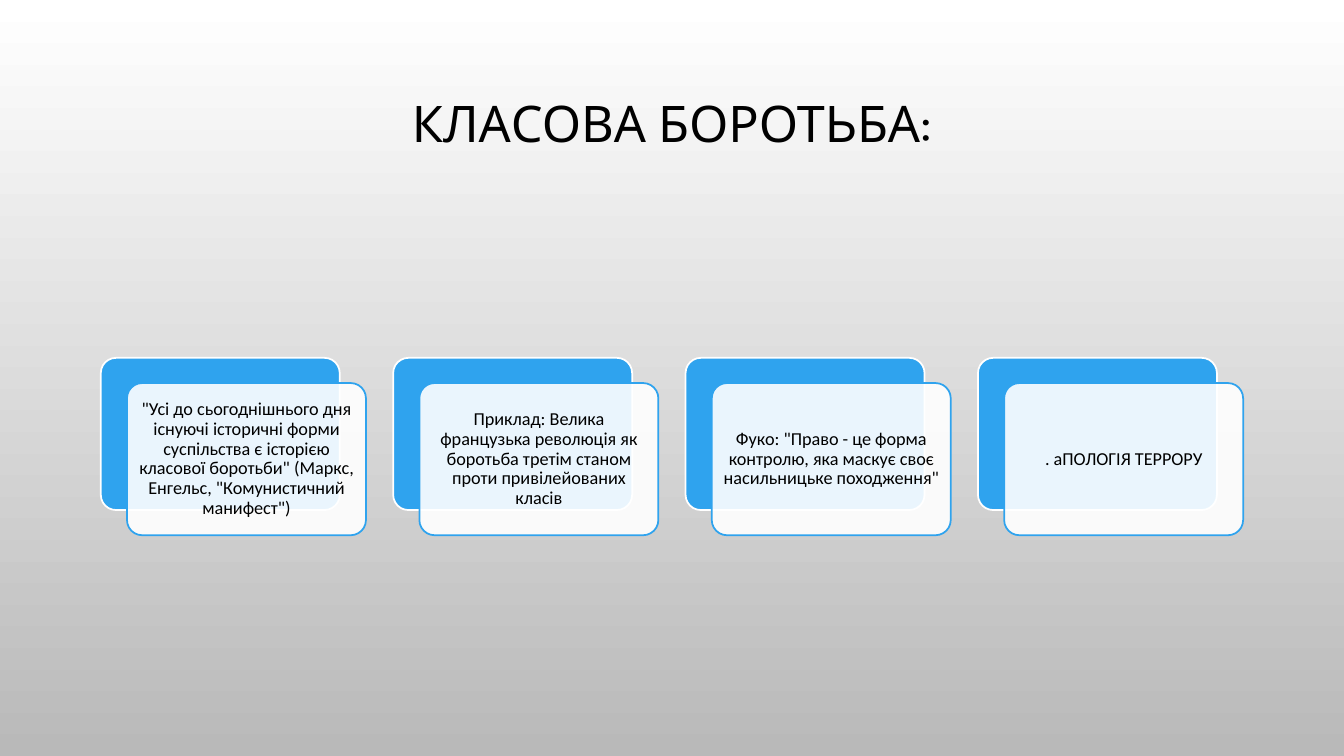
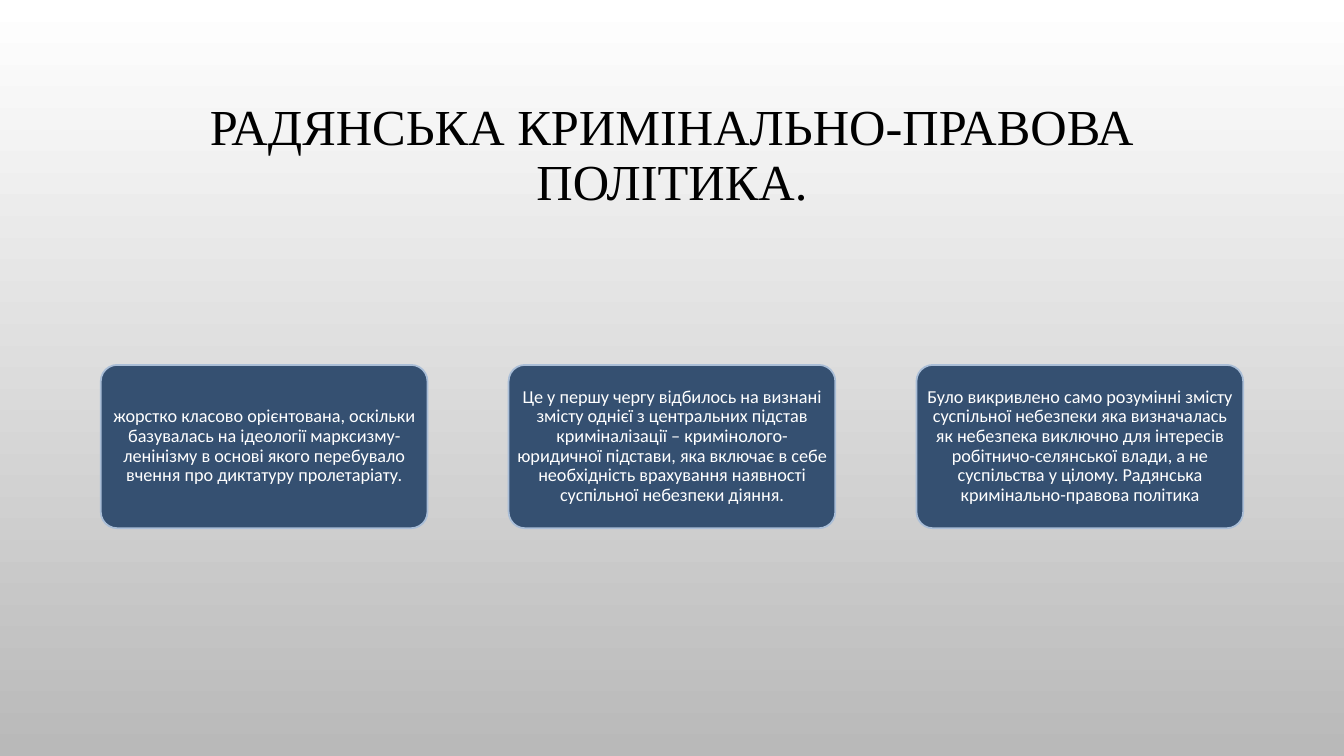
from lxml import etree
from pptx import Presentation
from pptx.dml.color import RGBColor
from pptx.enum.shapes import MSO_SHAPE
from pptx.enum.text import MSO_ANCHOR, MSO_AUTO_SIZE, PP_ALIGN
from pptx.oxml.ns import qn
from pptx.util import Inches, Pt

# Content
CLASS_STRUGGLE = {
    "title": "КЛАСОВА БОРОТЬБА:",
    "title_font": "Karla",
    "space_below": 0.66,
    "cards": [
        "\"Усі до сьогоднішнього дня існуючі історичні форми суспільства є історією "
        "класової боротьби\" (Маркс, Енгельс, \"Комунистичний манифест\")",
        "Приклад: Велика французька революція як боротьба третім станом проти "
        "привілейованих класів",
        "Фуко: \"Право - це форма контролю, яка маскує своє насильницьке походження\"",
        ". аПОЛОГІЯ ТЕРРОРУ",
    ],
}
SOVIET_POLICY = {
    "title": "РАДЯНСЬКА КРИМІНАЛЬНО-ПРАВОВА ПОЛІТИКА.",
    "title_font": "Times New Roman",
    "space_below": 0.05,
    "cards": [
        "жорстко класово орієнтована, оскільки базувалась на ідеології "
        "марксизму-ленінізму в основі якого перебувало вчення про диктатуру пролетаріату.",
        "Це у першу чергу відбилось на визнані змісту однієї з центральних підстав "
        "криміналізації – кримінолого-юридичної підстави, яка включає в себе "
        "необхідність врахування наявності суспільної небезпеки діяння.",
        "Було викривлено само розумінні змісту суспільної небезпеки яка визначалась "
        "як небезпека виключно для інтересів робітничо-селянської влади, а не "
        "суспільства у цілому. Радянська кримінально-правова політика",
    ],
}

# Shared style
COLORS = {
    "white": "FFFFFF", "gray": "B9B9B9", "black": "000000",
    "blue": "2FA3EE", "navy": "355071", "pale": "AABED7",
}
LEFT, SPAN = 1, 11.33


def color(name):
    return RGBColor.from_string(COLORS[name])


def style_template(presentation, layout):
    fill = presentation.slide_master.background.fill
    fill.gradient()
    fill.gradient_angle = 270
    for stop, name in zip(fill.gradient_stops, ("white", "gray")):
        stop.color.rgb = color(name)
    for placeholder in layout.placeholders:
        if placeholder.placeholder_format.idx == 0:
            placeholder.left, placeholder.top = Inches(LEFT), Inches(0.68)
            placeholder.width, placeholder.height = Inches(SPAN), Inches(1.75)


def add_titled_slide(presentation, layout, content):
    slide = presentation.slides.add_slide(layout)
    title = slide.shapes.title
    title.text = content["title"]
    frame = title.text_frame
    frame.auto_size = MSO_AUTO_SIZE.NONE
    frame.vertical_anchor = MSO_ANCHOR.MIDDLE
    frame.margin_bottom = Inches(content["space_below"])
    style_paragraph(frame.paragraphs[0], content["title_font"], 36, "black")
    return slide


def style_paragraph(paragraph, font_name, size, font_color):
    paragraph.alignment = PP_ALIGN.CENTER
    paragraph.line_spacing = 0.9
    paragraph.font.name = font_name
    paragraph.font.size = Pt(size)
    paragraph.font.color.rgb = color(font_color)


def add_card(slide, left, top, width, height, fill, line):
    card = slide.shapes.add_shape(MSO_SHAPE.ROUNDED_RECTANGLE, Inches(left),
                                  Inches(top), Inches(width), Inches(height))
    card.adjustments[0] = 0.1
    card.shadow.inherit = False
    card.fill.solid()
    card.fill.fore_color.rgb = color(fill)
    card.line.color.rgb = color(line)
    card.line.width = Pt(1.25)
    return card


def write_card(card, text, font_color, side, end):
    frame = card.text_frame
    frame.word_wrap = True
    frame.vertical_anchor = MSO_ANCHOR.MIDDLE
    frame.margin_left = frame.margin_right = Inches(side)
    frame.margin_top = frame.margin_bottom = Inches(end)
    frame.text = text
    style_paragraph(frame.paragraphs[0], "Calibri", 13, font_color)


def set_opacity(shape, percent):
    fill_color = shape.fill._xPr.find(qn("a:solidFill")).find(qn("a:srgbClr"))
    etree.SubElement(fill_color, qn("a:alpha")).set("val", str(percent * 1000))


def spread(count, width):
    """Left edges of equally spaced items that fill the content span."""
    pitch = (SPAN - width) / (count - 1)
    return [LEFT + index * pitch for index in range(count)]


def build_class_struggle(presentation, layout):
    slide = add_titled_slide(presentation, layout, CLASS_STRUGGLE)
    texts = CLASS_STRUGGLE["cards"]
    width, height, top = 2.37, 1.51, 3.55
    shift_x, shift_y = 0.26, 0.25
    for left, text in zip(spread(len(texts), width + shift_x), texts):
        add_card(slide, left, top, width, height, "blue", "white")
        front = add_card(slide, left + shift_x, top + shift_y, width, height,
                         "white", "blue")
        set_opacity(front, 90)
        write_card(front, text, "black", 0.05, 0.05)


def build_soviet_policy(presentation, layout):
    slide = add_titled_slide(presentation, layout, SOVIET_POLICY)
    texts = SOVIET_POLICY["cards"]
    width, height, top = 3.24, 1.62, 3.62
    for left, text in zip(spread(len(texts), width), texts):
        card = add_card(slide, left, top, width, height, "navy", "pale")
        write_card(card, text, "white", 0.03, 0.02)


def main():
    presentation = Presentation()
    presentation.slide_width, presentation.slide_height = Inches(13.33), Inches(7.5)
    layout = presentation.slide_layouts[5]
    style_template(presentation, layout)
    build_class_struggle(presentation, layout)
    build_soviet_policy(presentation, layout)
    presentation.save("out.pptx")


if __name__ == "__main__":
    main()
